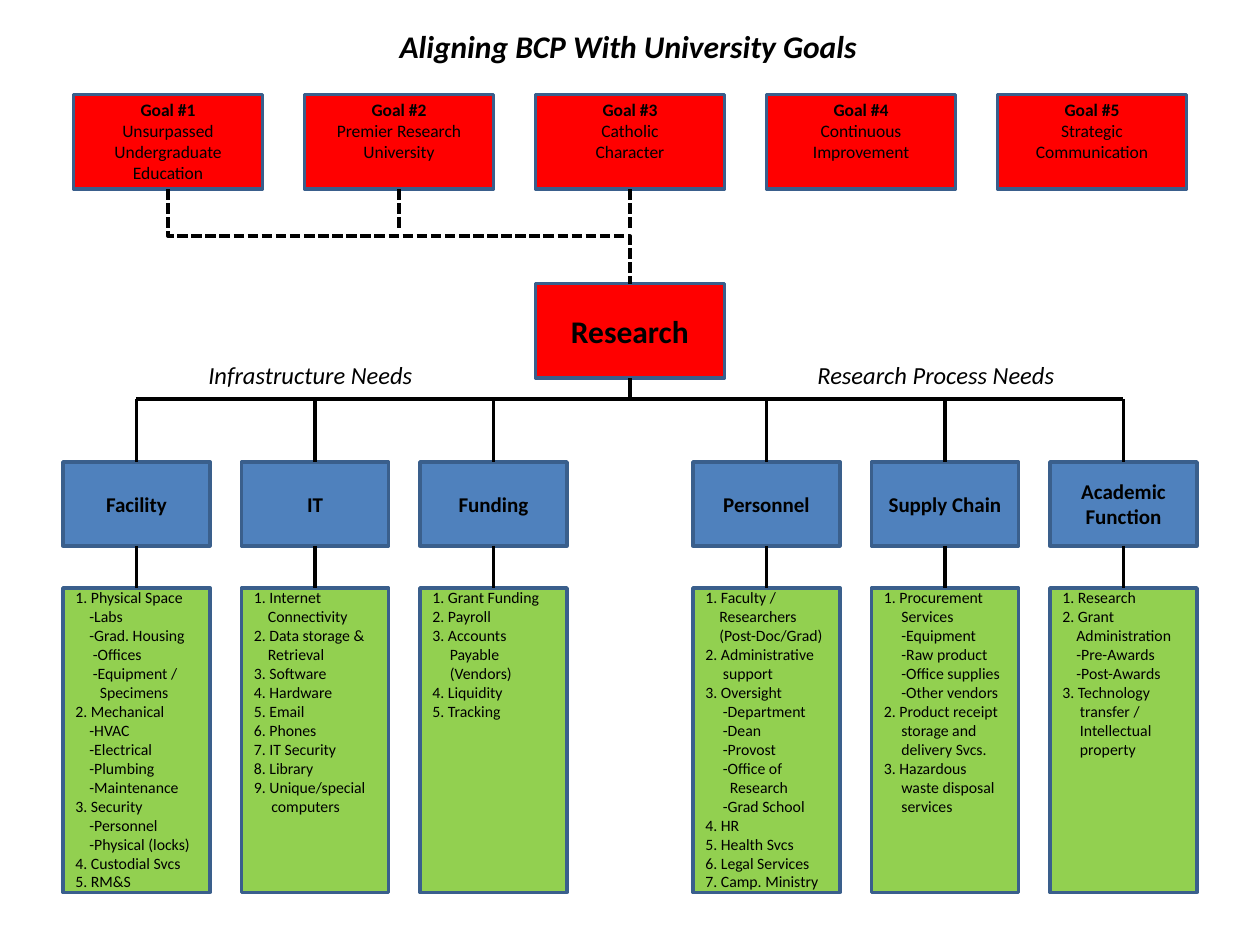
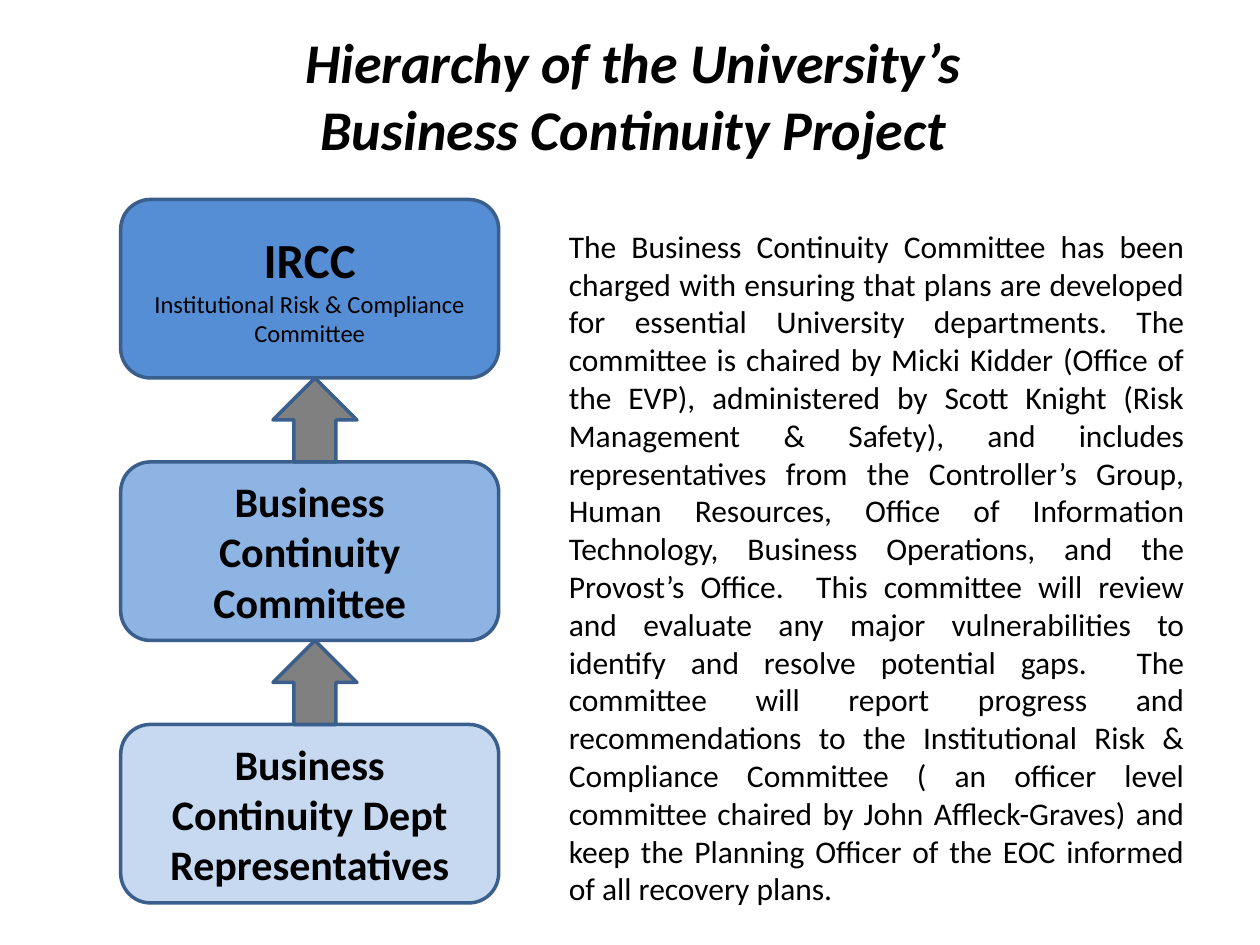
from pptx import Presentation
from pptx import util as u
from pptx.dml.color import RGBColor
from pptx.enum import dml, shapes, text
from pptx.oxml.ns import qn
from lxml import etree

Pt = u.Pt
FONT = "Calibri"
COLORS = {
    "ink": "000000",
    "outline": "3A5F8C",
    "goal": "FF0000",
    "need": "4F81BD",
    "detail": "92D050",
    "arrow": "808080",
    "top": "558ED5",
    "middle": "8EB4E3",
    "base": "C6D9F1",
}
CENTER = text.PP_ALIGN.CENTER
LEFT = text.PP_ALIGN.LEFT
JUSTIFY = text.PP_ALIGN.JUSTIFY
TOP = text.MSO_ANCHOR.TOP
RECTANGLE = shapes.MSO_SHAPE.RECTANGLE
ROUNDED = shapes.MSO_SHAPE.ROUNDED_RECTANGLE
SIDE_TOP, SIDE_BOTTOM = 0, 2

GOALS = [
    ["Goal #1", "Unsurpassed", "Undergraduate", "Education"],
    ["Goal #2", "Premier Research", "University"],
    ["Goal #3", "Catholic", "Character"],
    ["Goal #4", "Continuous", "Improvement"],
    ["Goal #5", "Strategic", "Communication"],
]
NEEDS = [
    (36, ["Facility"], [
        (0, "1. Physical Space"), (8, "-Labs"), (8, "-Grad. Housing"),
        (10, "-Offices"), (10, "-Equipment /"), (14, "Specimens"),
        (0, "2. Mechanical"), (8, "-HVAC"), (8, "-Electrical"),
        (8, "-Plumbing"), (8, "-Maintenance"), (0, "3. Security"),
        (8, "-Personnel"), (8, "-Physical (locks)"),
        (0, "4. Custodial Svcs"), (0, "5. RM&S")]),
    (138, ["IT"], [
        (0, "1. Internet"), (8, "Connectivity"), (0, "2. Data storage &"),
        (8, "Retrieval"), (0, "3. Software"), (0, "4. Hardware"),
        (0, "5. Email"), (0, "6. Phones"), (0, "7. IT Security"),
        (0, "8. Library"), (0, "9. Unique/special"), (10, "computers")]),
    (240, ["Funding"], [
        (0, "1. Grant Funding"), (0, "2. Payroll"), (0, "3. Accounts"),
        (10, "Payable"), (10, "(Vendors)"), (0, "4. Liquidity"),
        (0, "5. Tracking")]),
    (396, ["Personnel"], [
        (0, "1. Faculty /"), (8, "Researchers"), (8, "(Post-Doc/Grad)"),
        (0, "2. Administrative"), (10, "support"), (0, "3. Oversight"),
        (10, "-Department"), (10, "-Dean"), (10, "-Provost"),
        (10, "-Office of"), (14, "Research"), (10, "-Grad School"),
        (0, "4. HR"), (0, "5. Health Svcs"), (0, "6. Legal Services"),
        (0, "7. Camp. Ministry")]),
    (498, ["Supply Chain"], [
        (0, "1. Procurement"), (10, "Services"), (10, "-Equipment"),
        (10, "-Raw product"), (10, "-Office supplies"),
        (10, "-Other vendors"), (0, "2. Product receipt"),
        (10, "storage and"), (10, "delivery Svcs."), (0, "3. Hazardous"),
        (10, "waste disposal"), (10, "services")]),
    (600, ["Academic", "Function"], [
        (0, "1. Research"), (0, "2. Grant"), (8, "Administration"),
        (8, "-Pre-Awards"), (8, "-Post-Awards"), (0, "3. Technology"),
        (10, "transfer /"), (10, "Intellectual"), (10, "property")]),
]
LEVELS = [
    ("top", [("IRCC", 28, True),
             ("Institutional Risk & Compliance Committee", 14, False)]),
    ("middle", [("Business Continuity Committee", 24, True)]),
    ("base", [("Business Continuity Dept Representatives", 24, True)]),
]
COMMITTEE = (
    "The Business Continuity Committee has been charged with ensuring that "
    "plans are developed for essential University departments. The committee "
    "is chaired by Micki Kidder (Office of the EVP), administered by Scott "
    "Knight (Risk Management & Safety), and includes representatives from the "
    "Controller’s Group, Human Resources, Office of Information Technology, "
    "Business Operations, and the Provost’s Office.  This committee will "
    "review and evaluate any major vulnerabilities to identify and resolve "
    "potential gaps.  The committee will report progress and recommendations "
    "to the Institutional Risk & Compliance Committee ( an officer level "
    "committee chaired by John Affleck-Graves) and keep the Planning Officer "
    "of the EOC informed of all recovery plans."
)


def color(name):
    return RGBColor.from_string(COLORS[name])


def points(*lengths):
    return [Pt(length) for length in lengths]


def write(frame, lines, align=CENTER, italic=False, indents=None):
    frame.word_wrap = True
    for index, (words, size, bold) in enumerate(lines):
        para = frame.paragraphs[0] if index == 0 else frame.add_paragraph()
        para.alignment = align
        if indents and indents[index]:
            para._p.get_or_add_pPr().set("marL", str(Pt(indents[index])))
        span = para.add_run()
        span.text = words
        span.font.name = FONT
        span.font.size = Pt(size)
        span.font.bold = bold
        span.font.italic = italic
        span.font.color.rgb = color("ink")


def add_title(page, lines, size, area):
    title = page.shapes.title
    title.left, title.top, title.width, title.height = points(*area)
    title.text_frame.auto_size = text.MSO_AUTO_SIZE.NONE
    title.text_frame.vertical_anchor = TOP
    write(title.text_frame, [(line, size, True) for line in lines], italic=True)


def add_box(page, kind, area, fill, lines=(), **style):
    box = page.shapes.add_shape(kind, *points(*area))
    box.shadow.inherit = False
    box.fill.solid()
    box.fill.fore_color.rgb = color(fill)
    box.line.color.rgb = color("outline")
    box.line.width = Pt(2)
    write(box.text_frame, lines, **style)
    return box


def pin_text_to_top(box, inset):
    box.text_frame.vertical_anchor = TOP
    box.text_frame.margin_top = Pt(inset)
    box.text_frame.margin_bottom = 0


def add_text(page, area, words, size, **style):
    box = page.shapes.add_textbox(*points(*area))
    write(box.text_frame, [(words, size, False)], **style)


def add_line(page, start, end, above=None, below=None, dashed=False,
             kind=shapes.MSO_CONNECTOR.STRAIGHT):
    line = page.shapes.add_connector(kind, *points(*start, *end))
    line.line.color.rgb = color("ink")
    line.line.width = Pt(2)
    if dashed:
        line.line.dash_style = dml.MSO_LINE.SQUARE_DOT
    etree.SubElement(line._element.spPr, qn("a:effectLst"))
    if above is not None:
        line.begin_connect(above, SIDE_BOTTOM)
    if below is not None:
        line.end_connect(below, SIDE_TOP)
    return line


def add_goals(page):
    goals = []
    for index, (name, *aim) in enumerate(GOALS):
        lines = [(name, 10, True)] + [(line, 10, False) for line in aim]
        box = add_box(page, RECTANGLE, (42 + 132 * index, 54, 108, 54),
                      "goal", lines)
        pin_text_to_top(box, 2.6)
        goals.append(box)
    return goals


def add_need(page, left, name, details, bus):
    header = add_box(page, RECTANGLE, (left, 264, 84, 48), "need",
                     [(line, 12, True) for line in name])
    detail = add_box(page, RECTANGLE, (left, 336, 84, 174), "detail",
                     [(line, 9, False) for _, line in details], align=LEFT,
                     indents=[indent for indent, _ in details])
    pin_text_to_top(detail, 0)
    middle = left + 42
    add_line(page, (middle, bus), (middle, 264), below=header)
    add_line(page, (middle, 312), (middle, 336), above=header, below=detail)


def build_alignment(page):
    add_title(page, ["Aligning BCP With University Goals"], 18,
              (173, 12, 372, 29))
    goals = add_goals(page)
    research = add_box(page, RECTANGLE, (306, 162, 108, 54), "goal",
                       [("Research", 18, True)])

    elbow = add_line(page, (255, 3), (201, 267), dashed=True,
                     kind=shapes.MSO_CONNECTOR.ELBOW)
    elbow._element.spPr.find(qn("a:xfrm")).set("rot", str(270 * 60000))
    for goal, middle in ((goals[1], 228), (goals[2], 360)):
        add_line(page, (middle, 108), (middle, 132), above=goal, dashed=True)

    bus = 228
    add_line(page, (78, bus), (642, bus))
    add_line(page, (360, 216), (360, bus), above=research)
    for left, name, details in NEEDS:
        add_need(page, left, name, details, bus)
    for left, words in ((112, "Infrastructure Needs"),
                        (460, "Research Process Needs")):
        add_text(page, (left, 202, 160, 25), words, 14, align=LEFT,
                 italic=True)


def build_hierarchy(page):
    add_title(page, ["Hierarchy of the University’s",
                     "Business Continuity Project"], 32, (38, 12, 648, 85))
    for index, (fill, lines) in enumerate(LEVELS):
        top = 114 + 150 * index
        add_box(page, ROUNDED, (69, top, 216, 102), fill, lines)
        if index:
            add_box(page, shapes.MSO_SHAPE.UP_ARROW, (156, top - 48, 48, 48),
                    "arrow")
    add_text(page, (318, 126, 366, 400), COMMITTEE, 18, align=JUSTIFY)


def main():
    deck = Presentation()
    deck.slide_width, deck.slide_height = points(720, 540)
    title_only = deck.slide_layouts[5]
    for build in (build_alignment, build_hierarchy):
        build(deck.slides.add_slide(title_only))
    deck.save("out.pptx")


if __name__ == "__main__":
    main()
